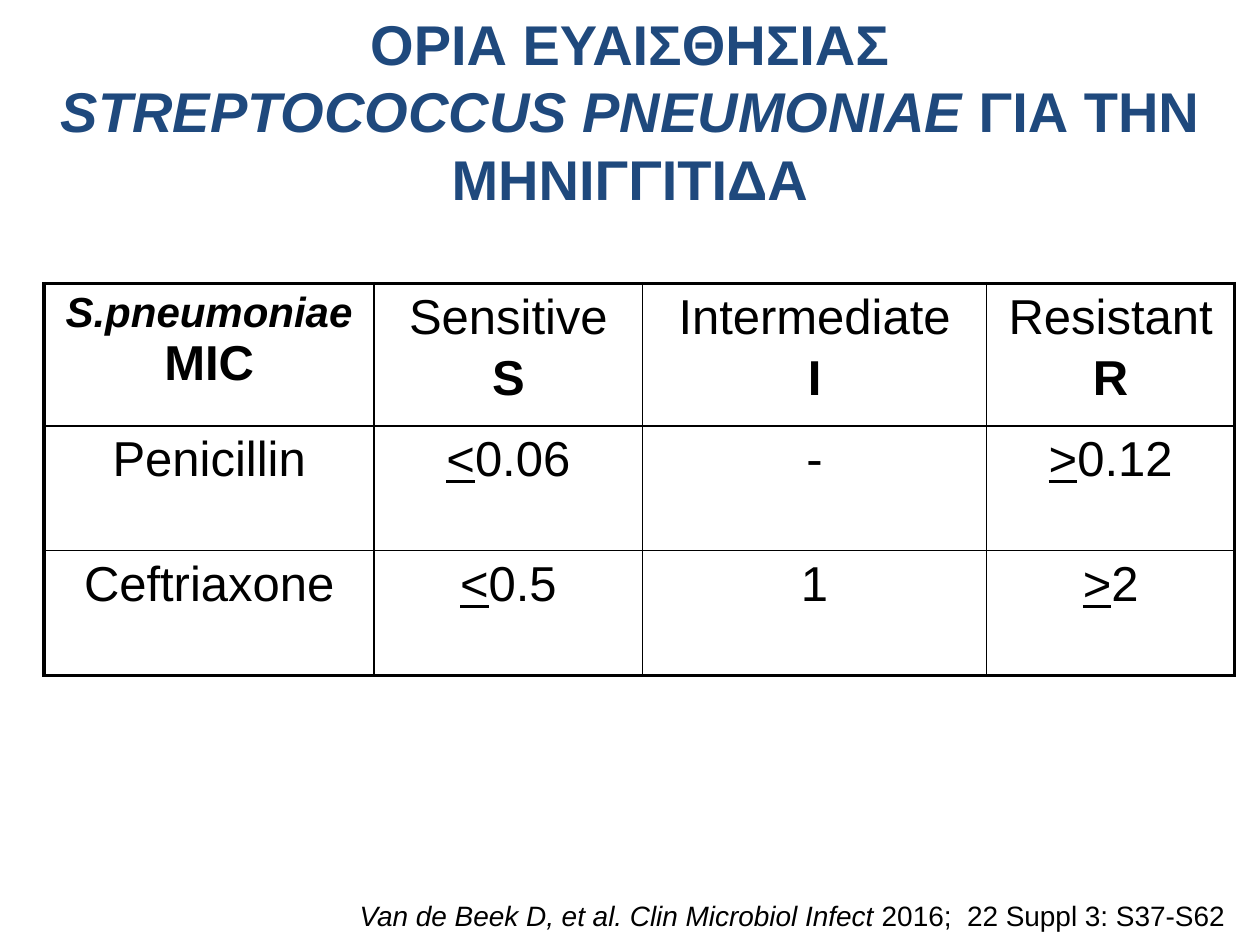
from lxml import etree
from pptx import Presentation
from pptx.dml.color import RGBColor
from pptx.enum.text import MSO_ANCHOR, MSO_AUTO_SIZE, PP_ALIGN
from pptx.oxml.ns import qn
from pptx.util import Pt

CENTER, RIGHT = PP_ALIGN.CENTER, PP_ALIGN.RIGHT
MIDDLE = MSO_ANCHOR.MIDDLE
NO_FIT = MSO_AUTO_SIZE.NONE
NAVY = RGBColor(0x1F, 0x49, 0x7D)
BLACK = RGBColor(0, 0, 0)
FONT = "Arial"
THIN, THICK = 1, 2.25

# A paragraph is a list of (text, format) runs; "\v" is a line break.
BOLD, ITALIC, UNDERLINE = {"bold": True}, {"italic": True}, {"underline": True}
BOLD_ITALIC = {"bold": True, "italic": True}
TITLE = [("OΡΙΑ ΕΥΑΙΣΘΗΣΙΑΣ\v", BOLD),
         ("STREPTOCOCCUS PNEUMONIAE ", BOLD_ITALIC),
         ("ΓΙΑ ΤΗΝ ΜΗΝΙΓΓΙΤΙΔΑ", BOLD)]
CITATION = [("Van de Beek D, et al. Clin Microbiol Infect ", ITALIC),
            ("2016;  22 Suppl 3: S37-S62", {})]
# A cell is a list of paragraphs.
ROWS = [
    [[[("S.pneumoniae\v", {"size": Pt(24), **BOLD_ITALIC}), ("MIC", BOLD)]],
     [[("Sensitive", {})], [("S", BOLD)]],
     [[("Intermediate", {})], [("I", BOLD)]],
     [[("Resistant", {})], [("R", BOLD)]]],
    [[[("Penicillin", {})]],
     [[("<", UNDERLINE), ("0.06", {})]],
     [[("-", {})]],
     [[(">", UNDERLINE), ("0.12", {})]]],
    [[[("Ceftriaxone", {})]],
     [[("<", UNDERLINE), ("0.5", {})]],
     [[("1", {})]],
     [[(">", UNDERLINE), ("2", {})]]],
]
COL_WIDTHS = [188.6, 153.4, 196.6, 141.8]
ROW_HEIGHTS = [81.4, 71.3, 71.3]


def write(p, runs, size, color, align):
    p.alignment = align
    for text, fmt in runs:
        r = p.add_run()
        r.text = text.rstrip("\v")
        r.font.name, r.font.size, r.font.color.rgb = FONT, Pt(size), color
        r.font.bold = r.font.italic = False
        for name, value in fmt.items():
            setattr(r.font, name, value)
        if text.endswith("\v"):
            p.add_line_break()


def set_borders(cell, widths):
    """Draw black cell edges; widths maps L, R, T, B to points."""
    tcPr = cell._tc.get_or_add_tcPr()
    for i, (side, width) in enumerate(widths.items()):
        ln = etree.Element(qn(f"a:ln{side}"), w=str(Pt(width)))
        fill = etree.SubElement(ln, qn("a:solidFill"))
        etree.SubElement(fill, qn("a:srgbClr"), val=str(BLACK))
        tcPr.insert(i, ln)


def add_title(slide):
    sp = slide.shapes.title
    sp.left, sp.top, sp.width, sp.height = Pt(0), Pt(37.4), Pt(720), Pt(90)
    tf = sp.text_frame
    tf.auto_size, tf.vertical_anchor = NO_FIT, MIDDLE
    tf.margin_bottom = Pt(42)
    write(tf.paragraphs[0], TITLE, 32, NAVY, CENTER)


def add_mic_table(slide):
    table = slide.shapes.add_table(
        len(ROWS), len(COL_WIDTHS), Pt(25.2), Pt(162),
        Pt(sum(COL_WIDTHS)), Pt(sum(ROW_HEIGHTS))).table
    table.first_row = table.horz_banding = False
    for col, width in zip(table.columns, COL_WIDTHS):
        col.width = Pt(width)
    for row, height in zip(table.rows, ROW_HEIGHTS):
        row.height = Pt(height)
    last_row, last_col = len(ROWS) - 1, len(COL_WIDTHS) - 1
    for i, row in enumerate(ROWS):
        for j, paragraphs in enumerate(row):
            cell = table.cell(i, j)
            cell.fill.background()
            set_borders(cell, {"L": THICK if j == 0 else THIN,
                               "R": THICK if j == last_col else THIN,
                               "T": THICK if i == 0 else THIN,
                               "B": THICK if i == last_row else THIN})
            tf = cell.text_frame
            for k, runs in enumerate(paragraphs):
                p = tf.add_paragraph() if k else tf.paragraphs[0]
                p.space_before = Pt(4 if k else 0)
                write(p, runs, 28, BLACK, CENTER)


def add_citation(slide):
    tf = slide.shapes.add_textbox(Pt(188), Pt(509.8), Pt(519), Pt(26.6)).text_frame
    tf.word_wrap = True
    write(tf.paragraphs[0], CITATION, 16, BLACK, RIGHT)


def main():
    prs = Presentation()
    prs.slide_width, prs.slide_height = Pt(720), Pt(540)
    slide = prs.slides.add_slide(prs.slide_layouts[5])
    add_title(slide)
    add_mic_table(slide)
    add_citation(slide)
    prs.save("out.pptx")


if __name__ == "__main__":
    main()
